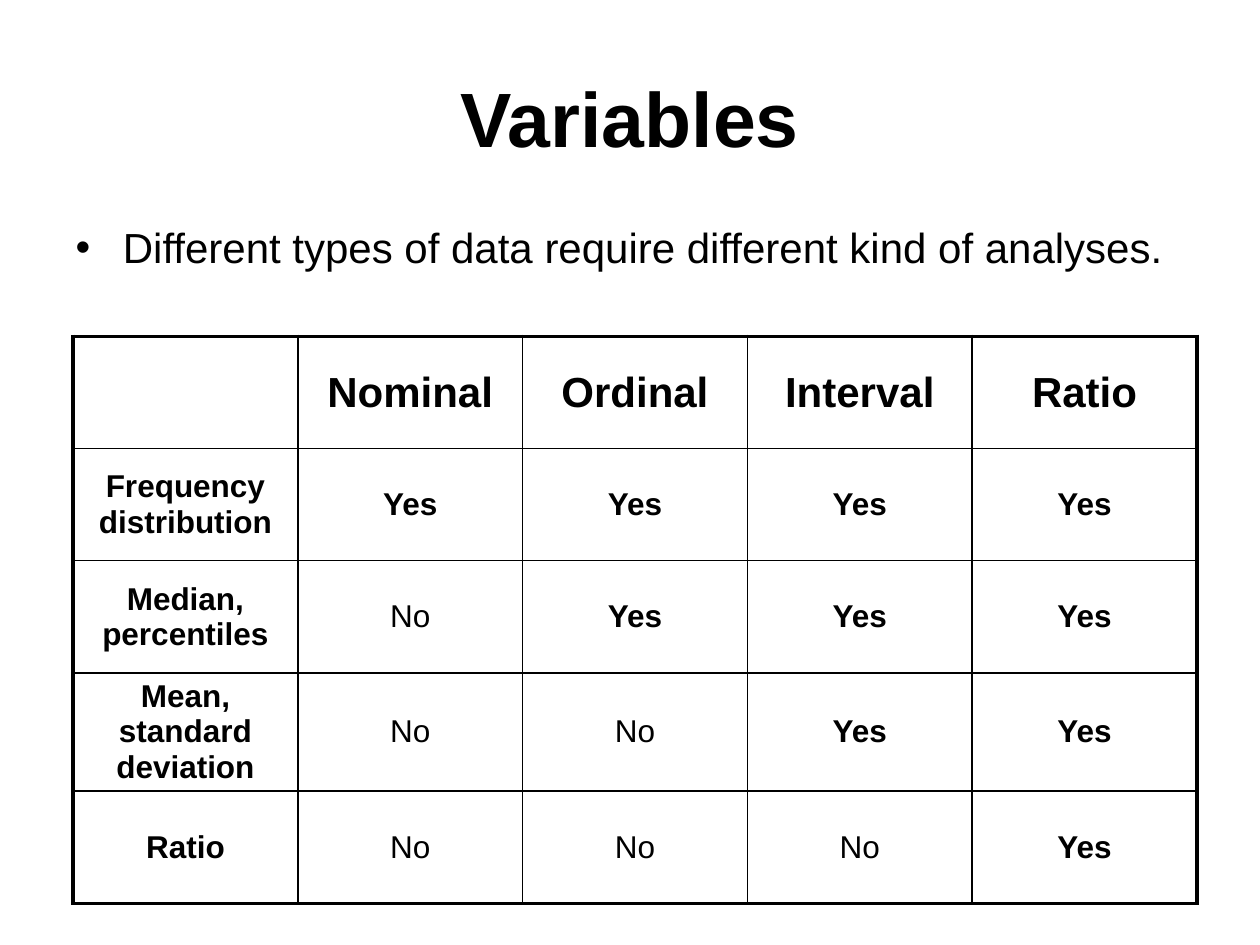
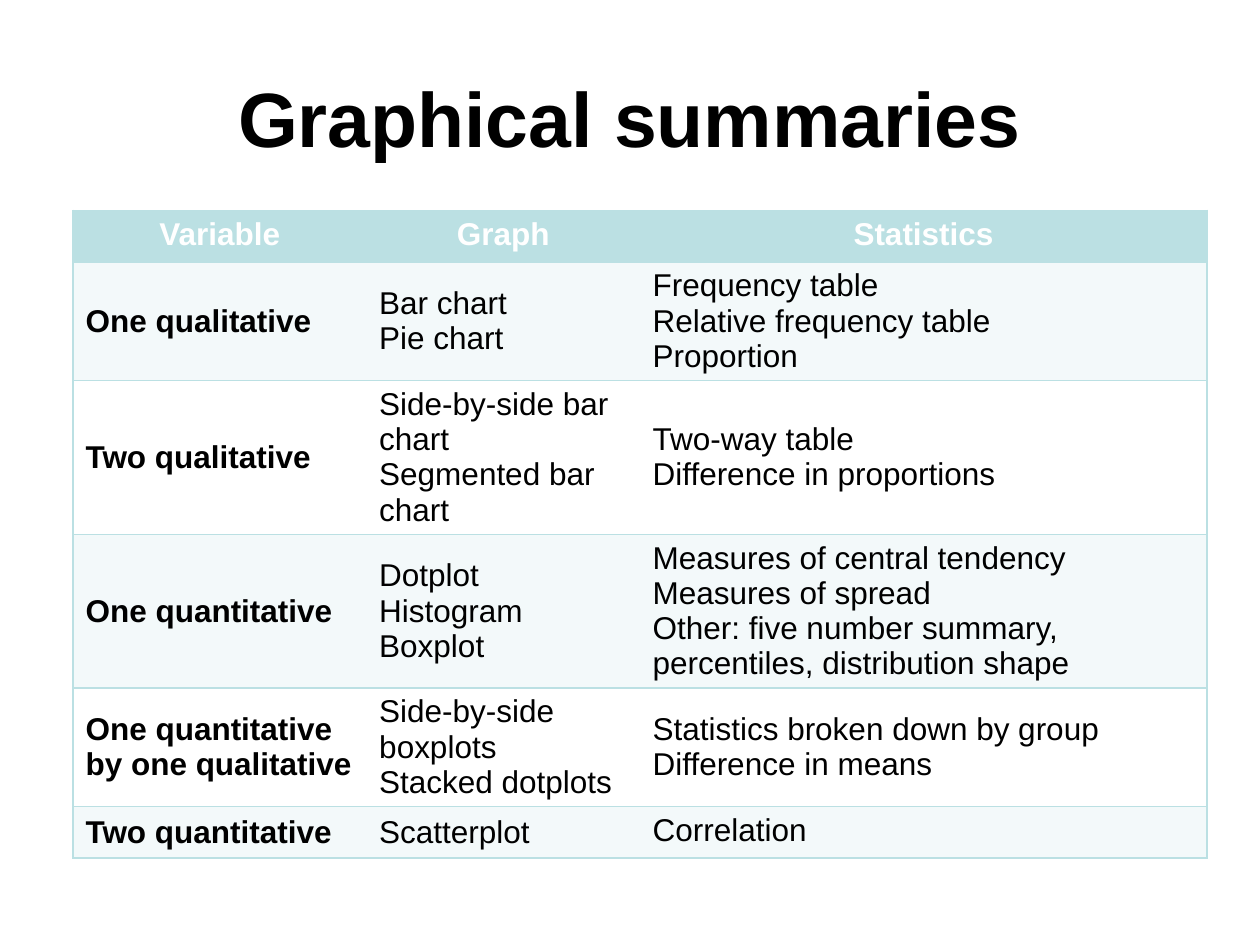
from dataclasses import dataclass

from lxml.etree import SubElement
from pptx import Presentation
from pptx.dml.color import RGBColor as Rgb
from pptx.enum.text import MSO_ANCHOR as Anchor, PP_ALIGN as Align
from pptx.oxml.ns import qn
from pptx.util import Inches, Pt


@dataclass(frozen=True)
class Theme:
    font: str = "Arial"
    ink: str = "000000"
    paper: str = "FFFFFF"
    teal: str = "BBE0E3"
    tint: str = "F3F9FA"
    title: float = 44
    lead: float = 24
    cell: float = 18
    thin: float = 1
    thick: float = 2.25


theme = Theme()


def write(frame, text, size=theme.cell, bold=False, color=theme.ink,
          align=Align.LEFT, before=0, spacing=None):
    frame.word_wrap = True
    for index, line in enumerate(text.split("\n")):
        paragraph = frame.add_paragraph() if index else frame.paragraphs[0]
        paragraph.alignment = align
        paragraph.line_spacing = spacing
        if before:
            space = SubElement(paragraph._p.get_or_add_pPr(), qn("a:spcBef"))
            SubElement(space, qn("a:spcPct"), val=str(before * 1000))
        run = paragraph.add_run()
        run.text = line
        run.font.name = theme.font
        run.font.size = Pt(size)
        run.font.bold = bold
        run.font.color.rgb = Rgb.from_string(color)


def set_borders(cell, color, **widths):
    properties = cell._tc.get_or_add_tcPr()
    for side in "LRTB":
        width = widths.get(side, 0)
        line = SubElement(properties, qn(f"a:ln{side}"), w=str(Pt(width)))
        if width:
            fill = SubElement(line, qn("a:solidFill"))
            SubElement(fill, qn("a:srgbClr"), val=color)
        else:
            SubElement(line, qn("a:noFill"))


deck = Presentation()
deck.slide_width, deck.slide_height = Inches(10), Inches(7.5)
COLUMN, ROW = deck.slide_width / 100, deck.slide_height / 75

variables = deck.slides.add_slide(deck.slide_layouts[1])
summaries = deck.slides.add_slide(deck.slide_layouts[5])
for slide, heading in ((variables, "Variables"), (summaries, "Graphical summaries")):
    title = slide.shapes.title
    title.left, title.top = int(5 * COLUMN), int(3 * ROW)
    title.width, title.height = int(90 * COLUMN), int(12.5 * ROW)
    title.text_frame.vertical_anchor = Anchor.MIDDLE
    write(title.text_frame, heading, size=theme.title, bold=True, align=Align.CENTER)

lead = variables.placeholders[1]
lead.left, lead.top = int(5 * COLUMN), int(17.5 * ROW)
lead.width, lead.height = int(90 * COLUMN), int(49.5 * ROW)
write(lead.text_frame, "Different types of data require different kind of analyses.",
      size=theme.lead, before=20, spacing=0.9)

scales = ["", "Nominal", "Ordinal", "Interval", "Ratio"]
measures = ["Frequency distribution", "Median, percentiles",
            "Mean, standard deviation", "Ratio"]
analyses = [scales]
for rank, measure in enumerate(measures):
    analyses.append([measure] + ["No"] * rank + ["Yes"] * (len(measures) - rank))

last = len(scales) - 1
analysis_table = variables.shapes.add_table(
    len(analyses), len(scales), int(5.8 * COLUMN), int(26.7 * ROW),
    int(89.2 * COLUMN), int(44.5 * ROW)).table
analysis_table.first_row = analysis_table.horz_banding = False
for r, entries in enumerate(analyses):
    for c, entry in enumerate(entries):
        cell = analysis_table.cell(r, c)
        set_borders(cell, theme.ink,
                    L=theme.thin if c else theme.thick,
                    R=theme.thin if c < last else theme.thick,
                    T=theme.thin if r else theme.thick,
                    B=theme.thin if r < last else theme.thick)
        cell.fill.background()
        cell.vertical_anchor = Anchor.MIDDLE
        if entry:
            write(cell.text_frame, entry, size=theme.cell if r else theme.lead,
                  bold=entry != "No", align=Align.CENTER, before=20)

guide = [
    ("Variable", "Graph", "Statistics"),
    ("One qualitative", "Bar chart\nPie chart",
     "Frequency table\nRelative frequency table\nProportion"),
    ("Two qualitative", "Side-by-side bar chart\nSegmented bar chart",
     "Two-way table\nDifference in proportions"),
    ("One quantitative", "Dotplot\nHistogram\nBoxplot",
     "Measures of central tendency\nMeasures of spread\n"
     "Other: five number summary, percentiles, distribution shape"),
    ("One quantitative by one qualitative", "Side-by-side boxplots\nStacked dotplots",
     "Statistics broken down by group\nDifference in means"),
    ("Two quantitative", "Scatterplot", "Correlation"),
]
guide_table = summaries.shapes.add_table(
    len(guide), len(guide[0]), int(5.8 * COLUMN), int(16.7 * ROW),
    int(90 * COLUMN), int(4.1 * len(guide) * ROW)).table
guide_table.first_row = guide_table.horz_banding = False
for column, share in zip(guide_table.columns, (23.3, 21.7, 45)):
    column.width = int(share * COLUMN)
for r, entries in enumerate(guide):
    band = theme.teal if r == 0 else theme.tint if r % 2 else theme.paper
    for c, entry in enumerate(entries):
        cell = guide_table.cell(r, c)
        set_borders(cell, theme.teal, T=theme.thin, B=theme.thin,
                    L=theme.thin if c == 0 else 0,
                    R=theme.thin if c == 2 else 0)
        cell.fill.solid()
        cell.fill.fore_color.rgb = Rgb.from_string(band)
        at_top = r == 0 or entry == "Correlation"
        cell.vertical_anchor = Anchor.TOP if at_top else Anchor.MIDDLE
        write(cell.text_frame, entry, bold=r == 0 or c == 0,
              color=theme.ink if r else theme.paper,
              align=Align.LEFT if r else Align.CENTER)

deck.save("out.pptx")
